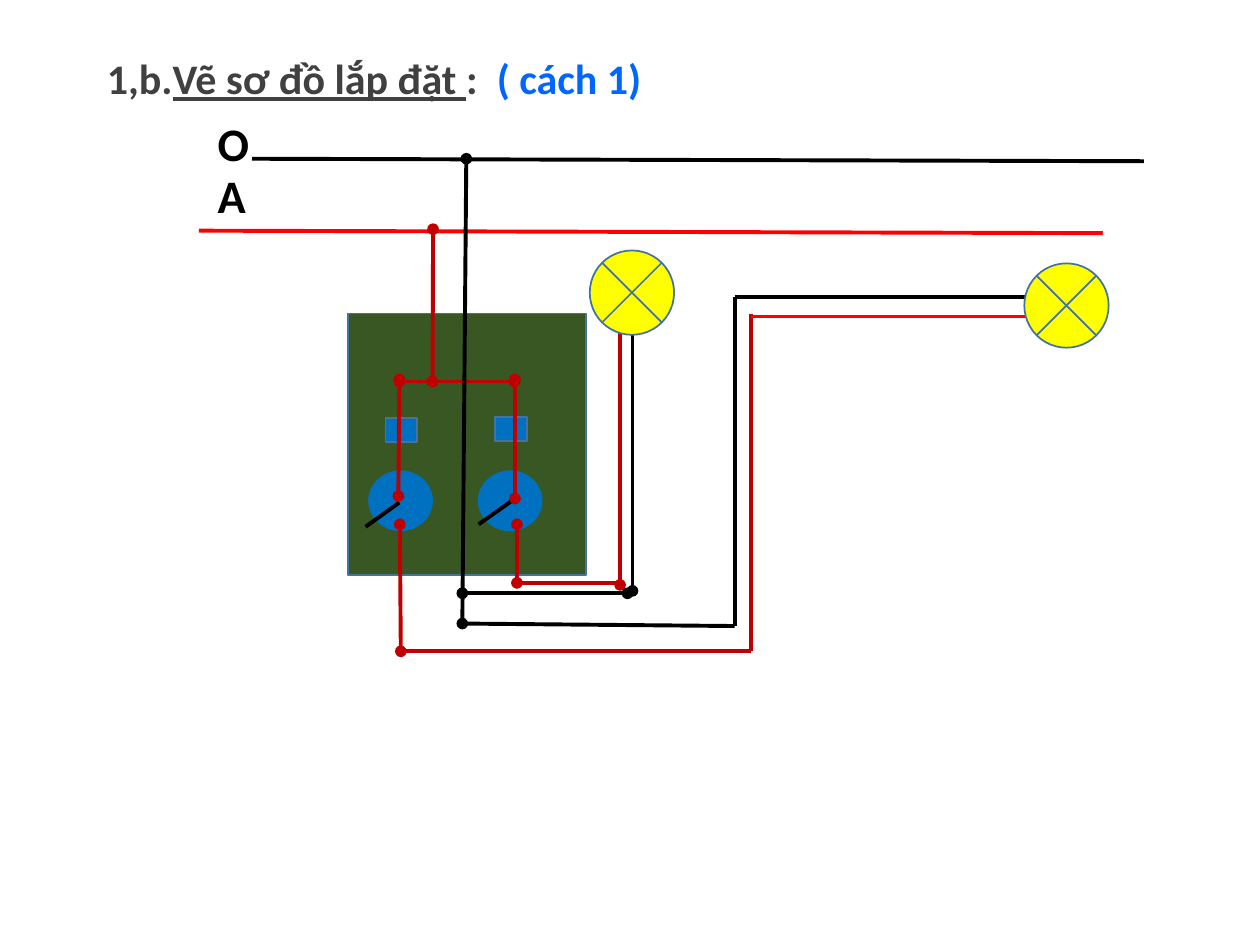
from lxml.etree import SubElement
from pptx import Presentation
from pptx.dml.color import RGBColor
from pptx.enum.shapes import MSO_CONNECTOR, MSO_SHAPE
from pptx.enum.text import MSO_ANCHOR, MSO_AUTO_SIZE, PP_ALIGN
from pptx.oxml.ns import qn
from pptx.util import Cm, Pt

COLORS = {
    "black": "000000", "gray": "404040", "blue": "0066FF", "red": "FF0000",
    "dark_red": "C00000", "green": "385723", "switch": "0070C0",
    "outline": "43739E", "yellow": "FFFF00",
}
SUPPLY = [
    ("red", 4.01, 4.65, 22.23, 4.7),
    ("black", 5.08, 3.2, 23.06, 3.25),
]
LEVERS = [
    ("black", 8.05, 10.13, 7.37, 10.62),
    ("black", 10.34, 10.08, 9.65, 10.57),
]
LIVE_DOTTED = [
    ("dark_red", 8.73, 4.62, 8.72, 7.69),
    ("dark_red", 8.05, 7.69, 10.37, 7.69),
    ("dark_red", 8.05, 7.65, 8.03, 10),
    ("dark_red", 10.38, 7.65, 10.38, 10.05),
    ("dark_red", 8.06, 10.57, 8.08, 13.13),
    ("dark_red", 10.42, 10.57, 10.42, 11.75),
    ("dark_red", 12.5, 5.28, 12.5, 11.79),
]
LIVE_PLAIN = [
    ("dark_red", 10.46, 11.75, 12.5, 11.75),
    ("dark_red", 8.15, 13.13, 15.14, 13.13),
    ("dark_red", 15.14, 6.32, 15.14, 13.13),
]
NEUTRAL_DOTTED = [
    ("black", 12.75, 5.89, 12.75, 11.91),
    ("black", 9.4, 3.2, 9.32, 12.57),
    ("black", 9.32, 11.96, 12.65, 11.96),
]
NEUTRAL_PLAIN = [
    ("black", 14.81, 5.99, 14.81, 12.62),
    ("black", 9.32, 12.57, 14.81, 12.62),
]
LAMP_FEED = [
    ("red", 15.14, 6.38, 21.39, 6.38),
    ("black", 14.81, 5.99, 21.06, 5.99),
]


def rgb(name):
    """Return the named colour."""
    return RGBColor.from_string(COLORS[name])


def add_title(s):
    """Place and format the title with its differently styled runs."""
    sp = s.shapes.title
    sp.left, sp.top, sp.width, sp.height = Cm(1.9), Cm(0.43), Cm(16.36), Cm(1.78)
    tf = sp.text_frame
    tf.auto_size = MSO_AUTO_SIZE.NONE
    tf.vertical_anchor = MSO_ANCHOR.BOTTOM
    p = tf.paragraphs[0]
    p.alignment = PP_ALIGN.LEFT
    p.space_before, p.space_after = Pt(0), Pt(3)
    p.font.name, p.font.size, p.font.bold = "Calibri", Pt(24), True
    for text, color, underline in (
        ("1,b.", "gray", False),
        ("Vẽ sơ đồ lắp đặt ", "gray", True),
        (":  ", "gray", False),
        ("( cách 1)", "blue", False),
    ):
        r = p.add_run()
        r.text = text
        r.font.underline = underline
        r.font.color.rgb = rgb(color)


def add_supply_labels(s):
    """Label the two supply lines."""
    tf = s.shapes.add_textbox(Cm(4.14), Cm(2.5), Cm(1.47), Cm(2.97)).text_frame
    tf.word_wrap = True
    for i, text in enumerate("OA"):
        p = tf.paragraphs[0] if i == 0 else tf.add_paragraph()
        p.text = text
        p.line_spacing = 0.7
        p.space_before = Pt(7.5 * i)
        p.font.name, p.font.size, p.font.bold = "Calibri", Pt(26.6), True
        p.font.color.rgb = rgb("black")


def add_part(s, kind, x, y, w, h, fill, line="outline"):
    """Add a filled and outlined component."""
    sp = s.shapes.add_shape(kind, Cm(x), Cm(y), Cm(w), Cm(h))
    sp.shadow.inherit = False
    sp.fill.solid()
    sp.fill.fore_color.rgb = rgb(fill)
    sp.line.color.rgb = rgb(line)
    sp.line.width = Pt(1)


def add_wires(s, wires, dotted=False):
    """Add straight wires, optionally with a dot at both ends."""
    for color, x1, y1, x2, y2 in wires:
        c = s.shapes.add_connector(
            MSO_CONNECTOR.STRAIGHT, Cm(x1), Cm(y1), Cm(x2), Cm(y2))
        c.line.color.rgb = rgb(color)
        c.line.width = Pt(2.25)
        if dotted:
            ln = c.line._get_or_add_ln()
            for tag in ("a:headEnd", "a:tailEnd"):
                SubElement(ln, qn(tag), type="oval")
        SubElement(c._element.spPr, qn("a:effectLst"))


def add_lamp(s, x, y):
    """Add a lamp symbol."""
    add_part(s, MSO_SHAPE.FLOWCHART_SUMMING_JUNCTION, x, y, 1.7, 1.7, "yellow")


def add_board(s):
    """Add the switchboard with its fuses and switches."""
    add_part(s, MSO_SHAPE.RECTANGLE, 7.01, 6.32, 4.8, 5.28, "green")
    for x, y in ((7.77, 8.43), (9.98, 8.41)):
        add_part(s, MSO_SHAPE.RECTANGLE, x, y, 0.64, 0.48, "switch")
    for x in (7.44, 9.65):
        add_part(s, MSO_SHAPE.OVAL, x, 9.5, 1.27, 1.19, "switch", "switch")


def main():
    """Build the wiring diagram slide."""
    prs = Presentation()
    prs.slide_width, prs.slide_height = Cm(25.4), Cm(19.05)
    s = prs.slides.add_slide(prs.slide_layouts[5])
    add_title(s)
    add_wires(s, SUPPLY)
    add_board(s)
    add_wires(s, LEVERS)
    add_wires(s, LIVE_DOTTED, dotted=True)
    add_wires(s, LIVE_PLAIN)
    add_wires(s, NEUTRAL_DOTTED, dotted=True)
    add_wires(s, NEUTRAL_PLAIN)
    add_lamp(s, 11.89, 5.05)
    add_wires(s, LAMP_FEED)
    add_lamp(s, 20.65, 5.31)
    add_supply_labels(s)
    prs.save("out.pptx")


if __name__ == "__main__":
    main()
